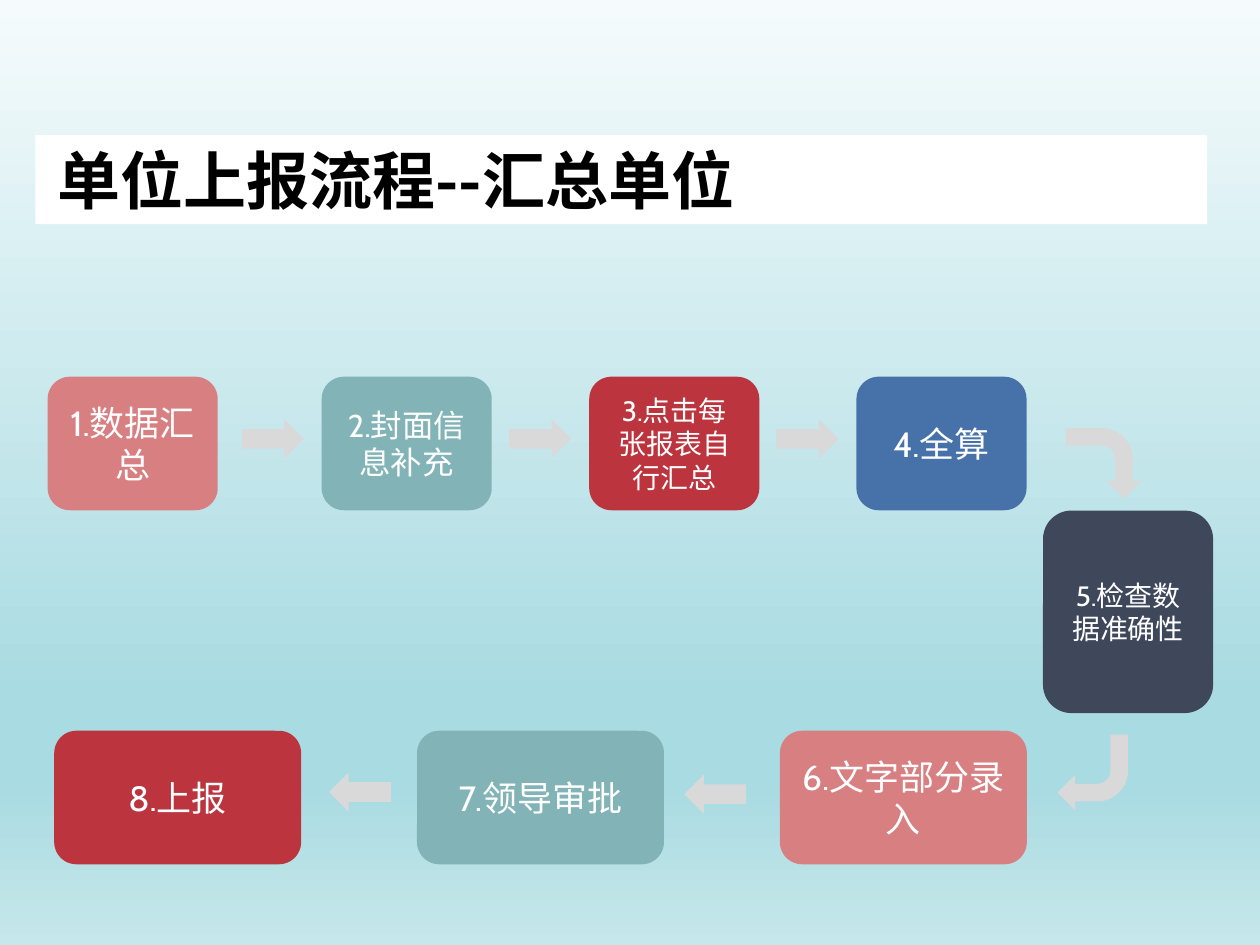
from dataclasses import dataclass, field
from typing import Any

from lxml import etree
from pptx import Presentation
from pptx.dml.color import RGBColor
from pptx.enum import shapes, text
from pptx.oxml import ns
from pptx.util import Pt

Kind = shapes.MSO_SHAPE


@dataclass(frozen=True)
class Theme:
    latin: str = "Cabin"
    east_asian: str = "Noto Sans CJK SC"
    white: str = "FFFFFF"
    black: str = "000000"
    arrow: str = "D9D9D9"
    rose: str = "D87F82"
    teal: str = "82B3B7"
    red: str = "BC353E"
    blue: str = "4772A9"
    navy: str = "3F485B"
    title: int = 36
    large: int = 20
    medium: int = 18
    small: int = 16
    sky: dict[int, str] = field(default_factory=lambda: {
        0: "F5FBFC", 74: "A9DBE2", 83: "A9DBE2", 100: "C6E7EB"})


@dataclass(frozen=True)
class Box:
    left: float
    top: float
    width: float
    height: float


@dataclass(frozen=True)
class Step:
    label: str
    box: Box
    color: str
    size: int


@dataclass(frozen=True)
class Arrow:
    kind: Any
    box: Box
    rotation: int = 0


THEME = Theme()

# Two rows of steps, joined by a taller step at the right
TOP_ROW, BOTTOM_ROW, STEP_HEIGHT = 215.3, 417.6, 76.3
NARROW, WIDE = 97.2, 141.1
BOTTOM_LEFT, BOTTOM_PITCH = 31, 207.35


def top_box(left: float) -> Box:
    return Box(left, TOP_ROW, NARROW, STEP_HEIGHT)


def bottom_box(column: int) -> Box:
    return Box(BOTTOM_LEFT + column * BOTTOM_PITCH, BOTTOM_ROW, WIDE, STEP_HEIGHT)


STEPS = [
    Step("1.数据汇总", top_box(27.2), THEME.rose, THEME.large),
    Step("2.封面信息补充", top_box(183.8), THEME.teal, THEME.medium),
    Step("3.点击每张报表自行汇总", top_box(336.7), THEME.red, THEME.small),
    Step("4.全算", top_box(489.4), THEME.blue, THEME.large),
    Step("5.检查数据准确性", Box(596, 291.8, NARROW, 115.7), THEME.navy, THEME.small),
    Step("6.文字部分录入", bottom_box(2), THEME.rose, THEME.large),
    Step("7.领导审批", bottom_box(1), THEME.teal, THEME.large),
    Step("8.上报", bottom_box(0), THEME.red, THEME.large),
]

ARROWS = [
    *(Arrow(Kind.RIGHT_ARROW, Box(138.2 + 152.75 * i, 239.6, 35.4, 22.4))
      for i in range(3)),
    Arrow(Kind.LEFT_ARROW, Box(188, 441.4, 35.4, 22.4)),
    Arrow(Kind.LEFT_ARROW, Box(391, 442.6, 35.4, 22.4)),
    Arrow(Kind.BENT_ARROW, Box(610.6, 243.2, 40.3, 43.2), 90),
    Arrow(Kind.BENT_ARROW, Box(604.3, 419.8, 40.3, 43.2), 180),
]


def apply(target: Any, values: dict[str, Any]) -> None:
    for name, value in values.items():
        setattr(target, name, value)


def draw_shape(slide: Any, kind: Any, box: Box, color: str) -> Any:
    shape = slide.shapes.add_shape(
        kind, Pt(box.left), Pt(box.top), Pt(box.width), Pt(box.height))
    shape.shadow.inherit = False
    shape.fill.solid()
    shape.fill.fore_color.rgb = RGBColor.from_string(color)
    shape.line.fill.background()
    return shape


def write(shape: Any, words: str, color: str, frame: dict[str, Any],
          align: Any, font: dict[str, Any]) -> None:
    apply(shape.text_frame, {"word_wrap": True, **frame})
    paragraph = shape.text_frame.paragraphs[0]
    paragraph.alignment = align
    run = paragraph.add_run()
    run.text = words
    apply(run.font, font)
    run.font.color.rgb = RGBColor.from_string(color)
    east_asian = etree.SubElement(run.font._element, ns.qn("a:ea"))
    east_asian.set("typeface", THEME.east_asian)


def draw_background(slide: Any) -> None:
    fill = slide.background.fill
    fill.gradient()
    fill.gradient_angle = 270
    stops = slide.background._cSld.find(".//" + ns.qn("a:gsLst"))
    for stop in list(stops):
        stops.remove(stop)
    for percent, color in THEME.sky.items():
        stop = etree.SubElement(stops, ns.qn("a:gs"), pos=str(percent * 1000))
        etree.SubElement(stop, ns.qn("a:srgbClr"), val=color)


def draw_title(slide: Any) -> None:
    banner = draw_shape(slide, Kind.RECTANGLE, Box(20.3, 77.2, 669.5, 50.9), THEME.white)
    write(banner, "单位上报流程--汇总单位", THEME.black,
          {"vertical_anchor": text.MSO_ANCHOR.TOP, "margin_left": Pt(12.6),
           "auto_size": text.MSO_AUTO_SIZE.SHAPE_TO_FIT_TEXT},
          text.PP_ALIGN.LEFT,
          {"name": THEME.east_asian, "size": Pt(THEME.title), "bold": True})


def draw_step(slide: Any, step: Step) -> None:
    card = draw_shape(slide, Kind.ROUNDED_RECTANGLE, step.box, step.color)
    write(card, step.label, THEME.white,
          {"vertical_anchor": text.MSO_ANCHOR.MIDDLE},
          text.PP_ALIGN.CENTER,
          {"name": THEME.latin, "size": Pt(step.size)})


def draw_arrow(slide: Any, arrow: Arrow) -> None:
    draw_shape(slide, arrow.kind, arrow.box, THEME.arrow).rotation = arrow.rotation


def main() -> None:
    deck = Presentation()
    apply(deck, {"slide_width": Pt(720), "slide_height": Pt(540)})
    slide = deck.slides.add_slide(deck.slide_layouts[6])
    draw_background(slide)
    draw_title(slide)
    for step in STEPS:
        draw_step(slide, step)
    for arrow in ARROWS:
        draw_arrow(slide, arrow)
    deck.save("out.pptx")


if __name__ == "__main__":
    main()
